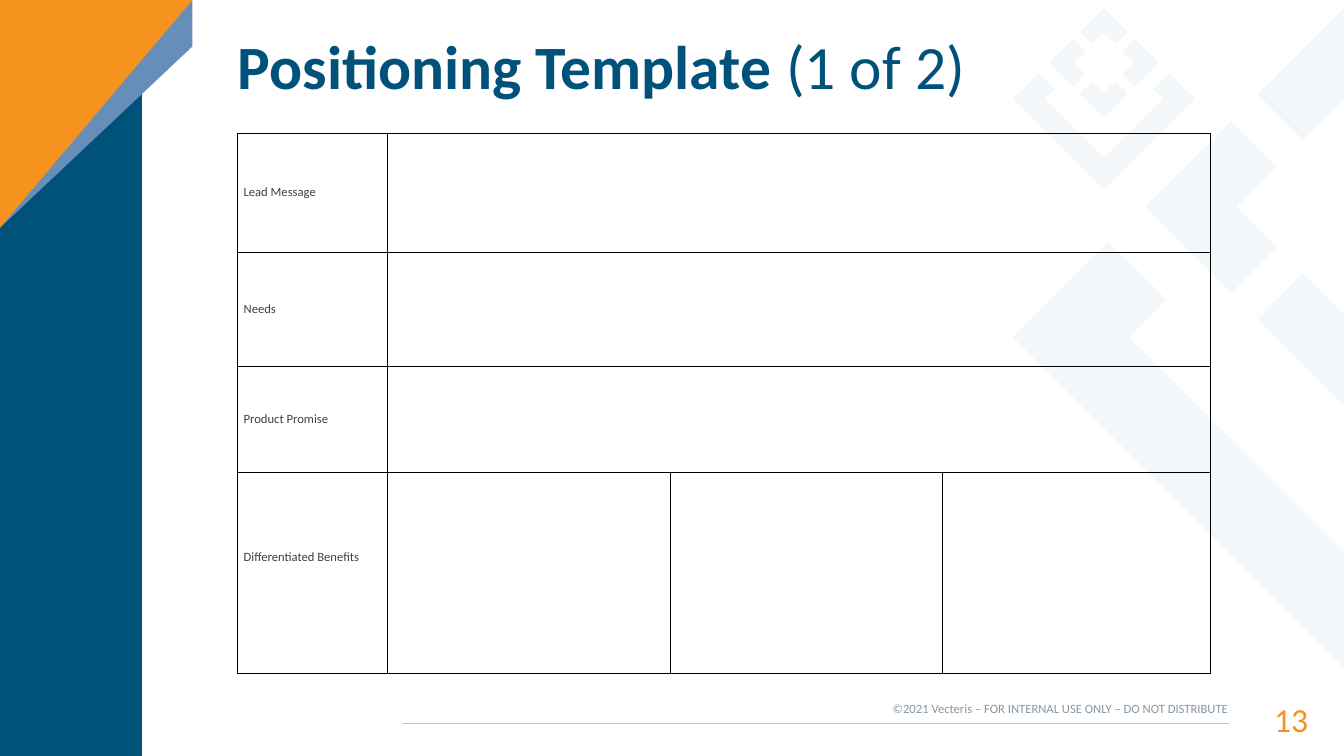
from dataclasses import dataclass

from lxml.etree import SubElement
from pptx import Presentation
from pptx.dml.color import RGBColor
from pptx.enum.shapes import MSO_CONNECTOR
from pptx.enum.text import MSO_ANCHOR, MSO_AUTO_SIZE, PP_ALIGN
from pptx.oxml.ns import qn
from pptx.util import Cm, Pt

NAVY = RGBColor(0x00, 0x52, 0x7B)
STEEL = RGBColor(0x66, 0x8E, 0xB8)
ORANGE = RGBColor(0xF6, 0x92, 0x1E)
PALE = RGBColor(0xE9, 0xEE, 0xF4)
RULE = RGBColor(0xB3, 0xC6, 0xDC)
GREY = RGBColor(0x87, 0x96, 0xA4)
CHARCOAL = RGBColor(0x40, 0x40, 0x40)
BLACK = RGBColor(0x00, 0x00, 0x00)
FONT = "Calibri"
WIDTH, HEIGHT = 33.87, 19.05

Points = list[tuple[float, float]]


@dataclass
class Polygon:
    points: Points
    color: RGBColor = PALE
    opacity: int = 100


@dataclass
class Label:
    text: str
    left: float
    top: float
    width: float
    height: float
    size: int
    color: RGBColor
    anchor: MSO_ANCHOR
    spacing: float


@dataclass
class TableRow:
    title: str
    height: float
    merged: bool = True
    bottom_margin: float = 0.1


DIAMOND_CENTER = (27.82, 1.58)
CHEVRON = [(1.38, 0), (0.78, 0.6), (0.47, 0.29), (0.75, 0), (0.47, -0.29), (0.78, -0.6)]
FRAME = [(-1.63, 0.25), (-2.3, 0.91), (0, 3.2), (2.3, 0.91), (1.63, 0.25),
         (1.23, 0.66), (1.5, 0.91), (0, 2.41), (-1.5, 0.91), (-1.23, 0.66)]
LARGE_PATTERN = [
    [(31.04, 3.05), (28.85, 5.21), (31.04, 7.39), (32.18, 6.22), (31.17, 5.21), (32.18, 4.19)],
    [(27.94, 6.1), (25.53, 8.51), (WIDTH, 16.84), (WIDTH, 13.94), (28.45, 8.51), (29.39, 7.54)],
    [(32.84, 6.88), (31.7, 8.05), (WIDTH, 10.21), (WIDTH, 7.9)],
    [(WIDTH, 0.2), (31.7, 2.39), (32.84, 3.53), (WIDTH, 2.51)],
]
SIDEBAR = [
    Polygon([(0, 0), (3.58, 0), (3.58, HEIGHT), (0, HEIGHT)], NAVY),
    Polygon([(4.85, 0), (0, 0), (0, 5.74), (4.85, 1.17)], STEEL),
    Polygon([(4.85, 0), (0, 0), (0, 5.74)], ORANGE),
]
LABELS = [
    Label("13", 30.94, 17.53, 2.03, 0.97, 24, ORANGE, MSO_ANCHOR.MIDDLE, 1.19),
    Label("©2021 Vecteris – FOR INTERNAL USE ONLY – DO NOT DISTRIBUTE",
          20.12, 17.65, 10.82, 0.38, 9, GREY, MSO_ANCHOR.TOP, 1.0),
]
COLUMNS = [3.76, 7.14, 6.86, 6.76]
ROWS = [
    TableRow("Lead Message", 3),
    TableRow("Needs", 2.87),
    TableRow("Product Promise", 2.67),
    TableRow("Differentiated Benefits", 5.08, merged=False, bottom_margin=0.86),
]


def around_diamond(points: Points, turns: int = 0) -> Points:
    """Turn points by quarter turns and move them to the diamond's centre."""
    for _ in range(turns):
        points = [(-y, x) for x, y in points]
    cx, cy = DIAMOND_CENTER
    return [(cx + x, cy + y) for x, y in points]


def draw_polygon(s, polygon: Polygon) -> None:
    start, *rest = [(Cm(x), Cm(y)) for x, y in polygon.points]
    builder = s.shapes.build_freeform(*start)
    builder.add_line_segments(rest)
    sp = builder.convert_to_shape()
    sp.shadow.inherit = False
    sp.fill.solid()
    sp.fill.fore_color.rgb = polygon.color
    sp.line.fill.background()
    if polygon.opacity < 100:
        color = sp._element.spPr.find(qn("a:solidFill"))[0]
        SubElement(color, qn("a:alpha"), val=str(polygon.opacity * 1000))


def draw_rule(s) -> None:
    line = s.shapes.add_connector(MSO_CONNECTOR.STRAIGHT, Cm(10.13), Cm(18.24), Cm(30.96), Cm(18.24))
    line.line.color.rgb = RULE
    line.line.width = Pt(0.82)
    SubElement(line._element.spPr, qn("a:effectLst"))


def set_font(font, size: int, color: RGBColor) -> None:
    font.name, font.size = FONT, Pt(size)
    font.color.rgb = color


def prepare_frame(tf, anchor: MSO_ANCHOR) -> None:
    tf.margin_left = tf.margin_right = tf.margin_top = tf.margin_bottom = 0
    tf.word_wrap = True
    tf.auto_size = MSO_AUTO_SIZE.NONE
    tf.vertical_anchor = anchor


def fill_title(s) -> None:
    title = s.shapes.title
    title.left, title.top, title.width, title.height = Cm(5.99), Cm(0.89), Cm(24.33), Cm(1.73)
    prepare_frame(title.text_frame, MSO_ANCHOR.MIDDLE)
    p = title.text_frame.paragraphs[0]
    p.alignment = PP_ALIGN.LEFT
    p.line_spacing = 0.9
    set_font(p.font, 44, NAVY)
    for text, bold in (("Positioning Template ", True), ("(1 of 2)", False)):
        r = p.add_run()
        r.text = text
        r.font.bold = bold


def draw_label(s, label: Label) -> None:
    box = s.shapes.add_textbox(Cm(label.left), Cm(label.top), Cm(label.width), Cm(label.height))
    prepare_frame(box.text_frame, label.anchor)
    p = box.text_frame.paragraphs[0]
    p.text = label.text
    p.alignment = PP_ALIGN.RIGHT
    p.line_spacing = label.spacing
    set_font(p.font, label.size, label.color)


def format_cell(cell) -> None:
    """Give a cell thin black borders, no fill and narrow margins."""
    tcPr = cell._tc.get_or_add_tcPr()
    for side in ("a:lnL", "a:lnR", "a:lnT", "a:lnB"):
        border = SubElement(tcPr, qn(side), w=str(Pt(0.5)))
        fill = SubElement(border, qn("a:solidFill"))
        SubElement(fill, qn("a:srgbClr"), val=str(BLACK))
    cell.fill.background()
    cell.margin_left = cell.margin_right = Cm(0.15)
    cell.margin_top = cell.margin_bottom = Cm(0.1)
    cell.vertical_anchor = MSO_ANCHOR.MIDDLE
    set_font(cell.text_frame.paragraphs[0].font, 9, CHARCOAL)


def draw_table(s) -> None:
    table = s.shapes.add_table(len(ROWS), len(COLUMNS), Cm(5.99), Cm(3.35),
                               Cm(sum(COLUMNS)), Cm(sum(row.height for row in ROWS))).table
    table.first_row = table.horz_banding = False
    for column, width in zip(table.columns, COLUMNS):
        column.width = Cm(width)
    for i, row in enumerate(ROWS):
        table.rows[i].height = Cm(row.height)
        heading = table.cell(i, 0)
        heading.text = row.title
        for cell in table.rows[i].cells:
            format_cell(cell)
        heading.margin_bottom = Cm(row.bottom_margin)
        if row.merged:
            table.cell(i, 1).merge(table.cell(i, len(COLUMNS) - 1))


def main() -> None:
    prs = Presentation()
    prs.slide_width, prs.slide_height = Cm(WIDTH), Cm(HEIGHT)
    s = prs.slides.add_slide(prs.slide_layouts[5])
    chevrons = [around_diamond(CHEVRON, turns) for turns in range(4)]
    pattern = LARGE_PATTERN + chevrons + [around_diamond(FRAME)]
    for polygon in [Polygon(points, opacity=47) for points in pattern] + SIDEBAR:
        draw_polygon(s, polygon)
    fill_title(s)
    draw_rule(s)
    for label in LABELS:
        draw_label(s, label)
    draw_table(s)
    prs.save("out.pptx")


if __name__ == "__main__":
    main()
